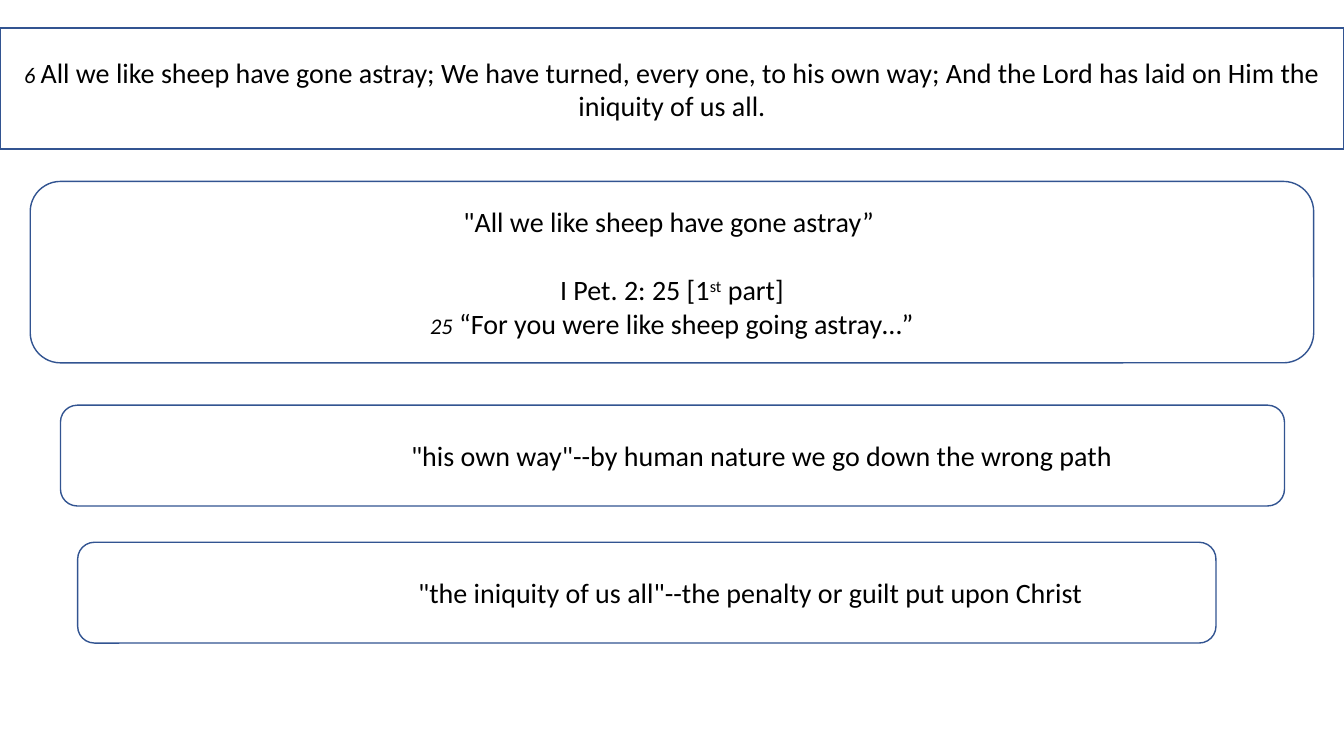
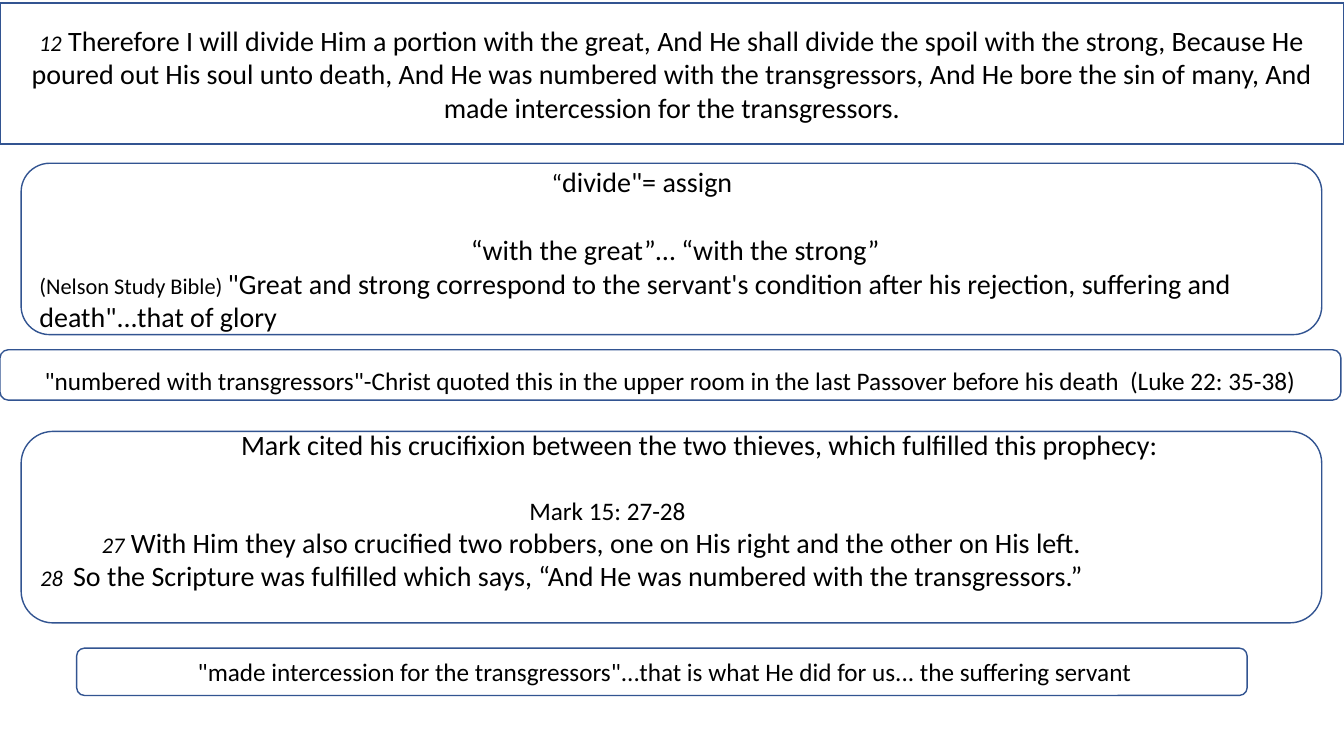
from pptx import Presentation
from pptx import util as u
from pptx.dml.color import RGBColor
from pptx.enum import shapes, text


def rgb(value):
    """Turn a hex string into a colour."""
    return RGBColor.from_string(value)


class Deck:
    """Holds the shared style and the current slide."""

    FONT = "Calibri"
    INK, PAPER, LINE = "000000", "FFFFFF", "325491"
    BODY, SMALL, VERSE = 20, 18, 16
    BLANK_LINE = 24.4

    def __init__(self):
        """Start an empty widescreen presentation."""
        self.prs = Presentation()
        self.prs.slide_width = u.Inches(13.33)
        self.prs.slide_height = u.Inches(7.5)
        self.s = None
        self.tf = None

    def slide(self):
        """Add a blank slide and make it current."""
        self.s = self.prs.slides.add_slide(self.prs.slide_layouts[6])

    def frame(self, kind, left, top, width, height, inset_top=0.05, inset_bottom=0.05):
        """Add an outlined white shape and make its text current."""
        sp = self.s.shapes.add_shape(
            kind, *(u.Inches(v) for v in (left, top, width, height)))
        sp.shadow.inherit = False
        sp.fill.solid()
        sp.fill.fore_color.rgb = rgb(self.PAPER)
        sp.line.color.rgb = rgb(self.LINE)
        sp.line.width = u.Pt(1)
        self.tf = sp.text_frame
        self.tf.word_wrap = True
        self.tf.vertical_anchor = text.MSO_ANCHOR.MIDDLE
        self.tf.margin_top = u.Inches(inset_top)
        self.tf.margin_bottom = u.Inches(inset_bottom)

    def banner(self, top, height, verse, words):
        """Add the full-width scripture band."""
        self.frame(shapes.MSO_SHAPE.RECTANGLE, 0, top, 13.33, height)
        self.para(self.verse(verse), words, center=True)

    def card(self, *place, **insets):
        """Add a rounded note box."""
        self.frame(shapes.MSO_SHAPE.ROUNDED_RECTANGLE, *place, **insets)

    def verse(self, number):
        """Describe a small italic verse number run."""
        return number, {"size": self.VERSE, "italic": True}

    def para(self, *runs, center=False, indent=0, gap=False):
        """Add a paragraph of plain or styled runs to the current shape."""
        p = self.tf.paragraphs[0]
        if p.runs:
            p = self.tf.add_paragraph()
        p.alignment = text.PP_ALIGN.CENTER if center else text.PP_ALIGN.LEFT
        if indent:
            p._p.get_or_add_pPr().set("marL", str(u.Inches(indent)))
        if gap:
            p.space_before = u.Pt(self.BLANK_LINE)
        for run in runs:
            words, style = (run, {}) if isinstance(run, str) else run
            self.run(p, words, **style)

    def run(self, p, words, size=BODY, italic=False, raised=False):
        """Add one run of text to a paragraph."""
        r = p.add_run()
        r.text = words
        r.font.name = self.FONT
        r.font.size = u.Pt(size)
        r.font.italic = italic
        r.font.color.rgb = rgb(self.INK)
        if raised:
            r._r.get_or_add_rPr().set("baseline", "30000")


def astray(d):
    """Build the slide on verse 6."""
    d.slide()
    d.banner(0.28, 1.2, "6 ",
             "All we like sheep have gone astray; We have turned, every one, to his own way; "
             "And the Lord has laid on Him the iniquity of us all.")
    d.card(0.3, 1.8, 12.73, 1.8)
    d.para("\"All we like sheep have gone astray” ", center=True)
    d.para("I Pet. 2: 25 [1", ("st", {"raised": True}), " part]", center=True, gap=True)
    d.para(d.verse("25"), " “For you were like sheep going astray…”", center=True)
    d.card(0.6, 4.02, 12.14, 1)
    d.para("\"his own way\"--by human nature we go down the wrong path", indent=3.33)
    d.card(0.77, 5.38, 11.29, 1)
    d.para("\"the iniquity of us all\"--the penalty or guilt put upon Christ", indent=3.23)


def portion(d):
    """Build the slide on verse 12."""
    small = {"size": d.SMALL}
    d.slide()
    d.banner(0.03, 1.4, "12",
             " Therefore I will divide Him a portion with the great, And He shall divide the spoil "
             "with the strong, Because He poured out His soul unto death, And He was numbered with "
             "the transgressors, And He bore the sin of many, And made intercession for the "
             "transgressors.")
    d.card(0.21, 1.62, 12.9, 1.7)
    d.para(("“", small), "divide\"= assign", indent=5.08)
    d.para("“with the great”… “with the strong”", indent=4.28, gap=True)
    d.para(("(Nelson Study Bible) ", {"size": d.VERSE}),
           "\"Great and strong correspond to the servant's condition after his rejection, "
           "suffering and death\"...that of glory")
    d.card(0, 3.47, 13.3, 0.5, inset_top=0.1, inset_bottom=0)
    d.para(("\"numbered with transgressors\"-Christ quoted this in the upper room in the last "
            "Passover before his death  (Luke 22: 35-38)", small), center=True)
    d.card(0.21, 4.28, 12.9, 1.9, inset_bottom=0.39)
    d.para("Mark cited his crucifixion between the two thieves, which fulfilled this prophecy:",
           indent=1.99)
    d.para(("Mark 15: 27-28", small), indent=4.85, gap=True)
    d.para(d.verse("27"),
           " With Him they also crucified two robbers, one on His right and the other on His left.",
           indent=0.61)
    d.para(d.verse("28  "),
           "So the Scripture was fulfilled which says, “And He was numbered with the "
           "transgressors.”")
    d.card(0.76, 6.43, 11.61, 0.47)
    d.para(("\"made intercession for the transgressors\"...that is what He did for us... "
            "the suffering servant", small), indent=1.08)


def main():
    """Build and save the presentation."""
    d = Deck()
    astray(d)
    portion(d)
    d.prs.save("out.pptx")


if __name__ == "__main__":
    main()
